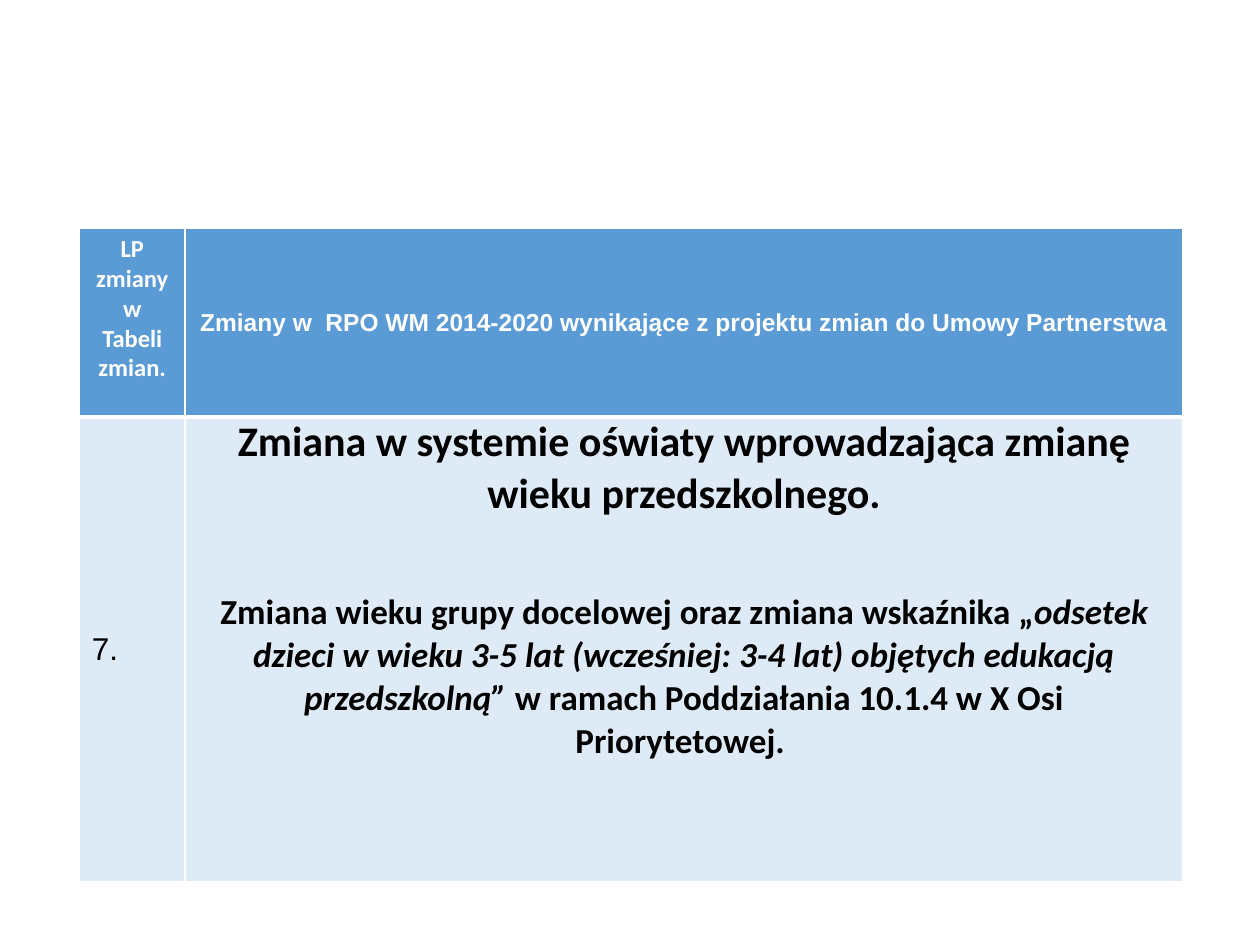
"""Build a slide with a table of changes to a regional programme."""

from dataclasses import dataclass

from lxml.etree import SubElement
from pptx import Presentation
from pptx.dml.color import RGBColor
from pptx.enum.text import MSO_ANCHOR, PP_ALIGN
from pptx.oxml.ns import qn
from pptx.util import Inches, Pt


@dataclass(frozen=True)
class Theme:
    """Colours, fonts and type sizes in points."""

    header: str = "5B9BD5"
    body: str = "DEEBF7"
    white: str = "FFFFFF"
    black: str = "000000"
    main_font: str = "Calibri"
    other_font: str = "Arial"
    header_size: int = 14
    number_size: int = 18
    heading_size: int = 24
    detail_size: int = 20


THEME = Theme()


@dataclass(frozen=True)
class Span:
    """A run of text with its own slant."""

    text: str
    italic: bool = False


@dataclass(frozen=True)
class Para:
    """A paragraph of spans that share one look."""

    spans: tuple[Span, ...]
    size: int
    font: str = THEME.main_font
    color: str = THEME.black
    bold: bool = True
    align: PP_ALIGN = PP_ALIGN.CENTER
    before: int = 0
    after: int = 0


@dataclass(frozen=True)
class CellContent:
    """The paragraphs, fill and layout of one table cell."""

    paras: tuple[Para, ...]
    fill: str
    anchor: MSO_ANCHOR = MSO_ANCHOR.MIDDLE
    margin: float = 0.05
    bottom_border: int = 1


COLUMNS = (0.84, 7.92)
ROWS = (1.5, 3.69)
CELLS = (
    (
        CellContent(
            (Para((Span("LP zmiany w Tabeli zmian."),), THEME.header_size, color=THEME.white),),
            THEME.header, MSO_ANCHOR.TOP, bottom_border=3,
        ),
        CellContent(
            (Para(
                (Span("Zmiany w  RPO WM 2014-2020 wynikające z projektu zmian do Umowy Partnerstwa"),),
                THEME.header_size, THEME.other_font, THEME.white,
            ),),
            THEME.header, bottom_border=3,
        ),
    ),
    (
        CellContent(
            (Para((Span("7."),), THEME.number_size, THEME.other_font, bold=False, align=PP_ALIGN.LEFT),),
            THEME.body,
        ),
        CellContent(
            (
                Para(
                    (Span("Zmiana w systemie oświaty wprowadzająca zmianę wieku przedszkolnego."),),
                    THEME.heading_size, after=6,
                ),
                Para(
                    (
                        Span("Zmiana wieku grupy docelowej oraz zmiana wskaźnika „"),
                        Span("odsetek dzieci w wieku 3-5 lat (wcześniej: 3-4 lat) "
                             "objętych edukacją przedszkolną” ", italic=True),
                        Span("w ramach Poddziałania 10.1.4 w X Osi Priorytetowej. "),
                    ),
                    THEME.detail_size, before=35, after=6,
                ),
            ),
            THEME.body, MSO_ANCHOR.TOP, margin=0,
        ),
    ),
)


def write_para(paragraph, para: Para) -> None:
    """Fill a paragraph run by run."""
    paragraph.alignment = para.align
    paragraph.space_before = Pt(para.before)
    paragraph.space_after = Pt(para.after)
    for span in para.spans:
        run = paragraph.add_run()
        run.text = span.text
        run.font.name = para.font
        run.font.size = Pt(para.size)
        run.font.bold = para.bold
        run.font.italic = span.italic
        run.font.color.rgb = RGBColor.from_string(para.color)


def add_border(cell, side: str, width: int) -> None:
    """Add a white line along one side of a cell."""
    properties = cell._tc.get_or_add_tcPr()
    line = SubElement(properties, qn(f"a:ln{side}"), w=str(Pt(width)))
    fill = SubElement(line, qn("a:solidFill"))
    SubElement(fill, qn("a:srgbClr"), val=THEME.white)


def fill_cell(cell, content: CellContent, top_border: int) -> None:
    """Give a cell its borders, fill and text."""
    widths = {"L": 1, "R": 1, "T": top_border, "B": content.bottom_border}
    for side, width in widths.items():
        add_border(cell, side, width)
    cell.fill.solid()
    cell.fill.fore_color.rgb = RGBColor.from_string(content.fill)
    cell.vertical_anchor = content.anchor
    cell.margin_left = cell.margin_right = Inches(0.1)
    cell.margin_top = cell.margin_bottom = Inches(content.margin)
    frame = cell.text_frame
    for index, para in enumerate(content.paras):
        write_para(frame.add_paragraph() if index else frame.paragraphs[0], para)


def add_changes_table(page) -> None:
    """Place the table of changes on the page."""
    table = page.shapes.add_table(
        len(ROWS), len(COLUMNS), Inches(0.63), Inches(1.81),
        Inches(sum(COLUMNS)), Inches(sum(ROWS)),
    ).table
    for column, width in zip(table.columns, COLUMNS):
        column.width = Inches(width)
    for row, height in zip(table.rows, ROWS):
        row.height = Inches(height)
    for row_index, contents in enumerate(CELLS):
        for column_index, content in enumerate(contents):
            top_border = CELLS[row_index - 1][column_index].bottom_border if row_index else 1
            fill_cell(table.cell(row_index, column_index), content, top_border)


def main() -> None:
    """Create and save the deck."""
    deck = Presentation()
    deck.slide_width, deck.slide_height = Inches(10), Inches(7.5)
    page = deck.slides.add_slide(deck.slide_layouts[6])
    add_changes_table(page)
    deck.save("out.pptx")


if __name__ == "__main__":
    main()
